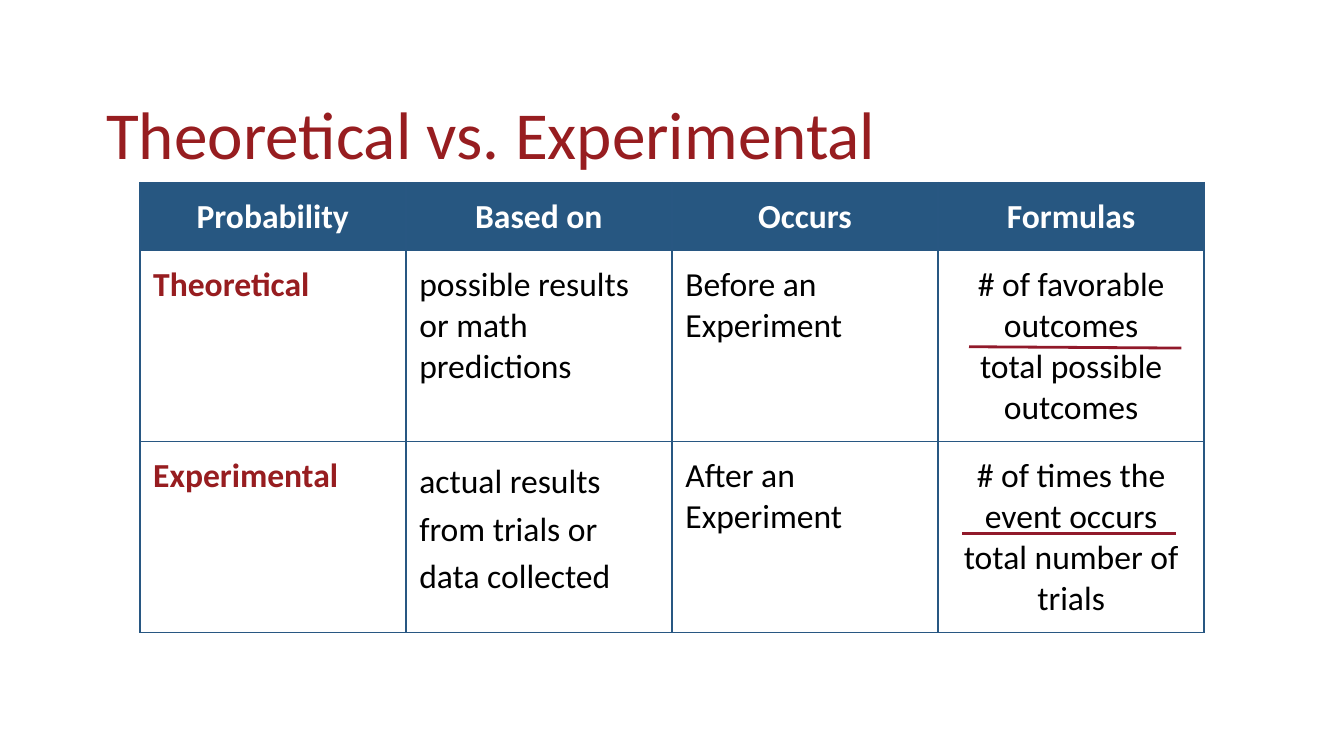
from lxml import etree
from pptx import Presentation
from pptx.dml.color import RGBColor
from pptx.enum.shapes import MSO_CONNECTOR as Connector
from pptx.enum.text import MSO_ANCHOR as Anchor, MSO_AUTO_SIZE as AutoSize, PP_ALIGN as Align
from pptx.oxml.ns import qn
from pptx.util import Inches, Pt

FONT = "Calibri"
RED, BLUE, BORDER, RULE = "971D20", "275781", "285782", "91192A"
WHITE, BLACK = "FFFFFF", "000000"
INSET = Inches(0.1)
COLUMN_WIDTH = 1.98
ROW_HEIGHTS = [0.5, 1.42, 1.42]

# Each cell is a list of paragraphs
ROWS = [
    [["Probability"], ["Based on"], ["Occurs"], ["Formulas"]],
    [["Theoretical"], ["possible results or math predictions"], ["Before an Experiment"],
     ["# of favorable outcomes", "total possible outcomes"]],
    [["Experimental"], ["actual results from trials or data collected"], ["After an Experiment"],
     ["# of times the event occurs", "total number of trials"]],
]


def rgb(color):
    return RGBColor.from_string(color)


def add_run(paragraph, text, size, color, bold=False):
    run = paragraph.add_run()
    run.text = text
    run.font.name = FONT
    run.font.size = Pt(size)
    run.font.bold = bold
    run.font.color.rgb = rgb(color)


def set_insets(box):
    box.margin_left = box.margin_right = INSET
    box.margin_top = box.margin_bottom = INSET


def set_borders(cell, color, width):
    properties = cell._tc.get_or_add_tcPr()
    for side in ("a:lnL", "a:lnR", "a:lnT", "a:lnB"):
        line = etree.SubElement(properties, qn(side), w=str(Pt(width)))
        fill = etree.SubElement(line, qn("a:solidFill"))
        etree.SubElement(fill, qn("a:srgbClr"), val=color)


def add_title(slide, text):
    title = slide.shapes.title
    title.left, title.top = Inches(0.69), Inches(0.3)
    title.width, title.height = Inches(8.62), Inches(1.09)
    frame = title.text_frame
    frame.auto_size = AutoSize.NONE
    frame.word_wrap = True
    frame.vertical_anchor = Anchor.BOTTOM
    set_insets(frame)
    paragraph = frame.paragraphs[0]
    paragraph.alignment = Align.LEFT
    paragraph.line_spacing = 1.5
    add_run(paragraph, text, 36, RED)


def fill_cell(cell, lines, color, bold, alignment):
    set_insets(cell)
    frame = cell.text_frame
    for index, line in enumerate(lines):
        paragraph = frame.add_paragraph() if index else frame.paragraphs[0]
        paragraph.alignment = alignment
        add_run(paragraph, line, 18, color, bold)


def add_comparison_table(slide):
    columns = len(ROWS[0])
    table = slide.shapes.add_table(
        len(ROWS), columns, Inches(1.04), Inches(1.36),
        Inches(COLUMN_WIDTH * columns), Inches(sum(ROW_HEIGHTS))).table
    table.first_row = table.horz_banding = False
    for column in table.columns:
        column.width = Inches(COLUMN_WIDTH)
    for row_index, row in enumerate(ROWS):
        table.rows[row_index].height = Inches(ROW_HEIGHTS[row_index])
        for column_index, lines in enumerate(row):
            cell = table.cell(row_index, column_index)
            header, label = row_index == 0, column_index == 0
            color = WHITE if header else RED if label else BLACK
            centred = header or column_index == columns - 1
            set_borders(cell, BORDER, 1)
            if header:
                cell.fill.solid()
                cell.fill.fore_color.rgb = rgb(BLUE)
            else:
                cell.fill.background()
            fill_cell(cell, lines, color, header or label,
                      Align.CENTER if centred else Align.LEFT)
    # The experimental basis is set with looser lines
    paragraph = table.cell(2, 1).text_frame.paragraphs[0]
    paragraph.line_spacing = 1.16
    paragraph.space_after = Pt(8)


def add_fraction_bar(slide, x1, y1, x2, y2):
    bar = slide.shapes.add_connector(
        Connector.STRAIGHT, Inches(x1), Inches(y1), Inches(x2), Inches(y2))
    bar.line.color.rgb = rgb(RULE)
    bar.line.width = Pt(1.5)
    etree.SubElement(bar._element.spPr, qn("a:effectLst"))


def main():
    presentation = Presentation()
    # Widescreen, 16:9
    presentation.slide_width = Inches(10)
    presentation.slide_height = Inches(10) * 9 // 16
    slide = presentation.slides.add_slide(presentation.slide_layouts[5])
    add_title(slide, "Theoretical vs. Experimental")
    add_comparison_table(slide)
    # Bars between numerator and denominator
    add_fraction_bar(slide, 7.21, 2.58, 8.79, 2.59)
    add_fraction_bar(slide, 7.16, 3.97, 8.75, 3.97)
    presentation.save("out.pptx")


if __name__ == "__main__":
    main()
